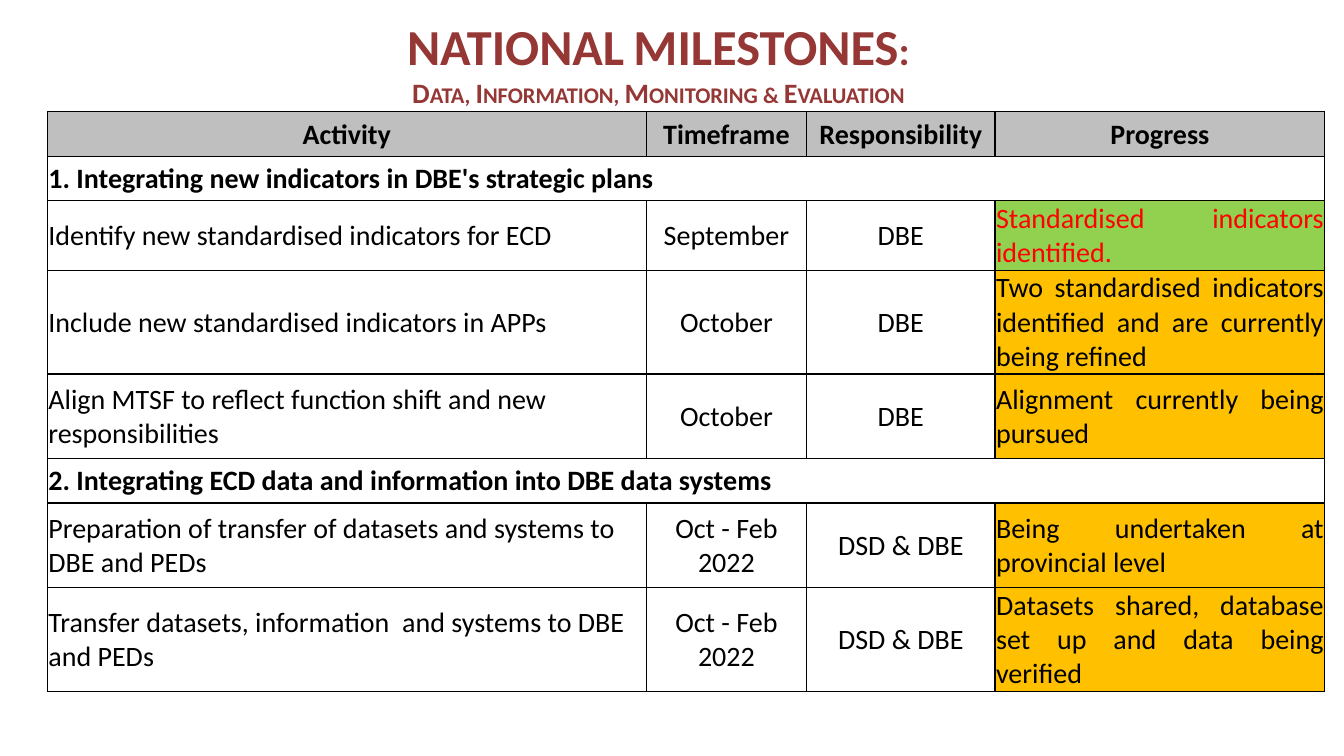
from lxml import etree
from pptx import Presentation
from pptx.dml.color import RGBColor
from pptx.enum.text import MSO_ANCHOR as Anchor, PP_ALIGN as Align
from pptx.oxml.ns import qn
from pptx.util import Inches, Pt

FONT = "Calibri"
COLORS = {
    "title": "953735",
    "text": "000000",
    "alert": "FF0000",
    "border": "000000",
    "header": "BFBFBF",
    "plain": "FFFFFF",
    "done": "92D050",
    "ongoing": "FFC000",
}

TITLE_LINES = [
    ("NATIONAL MILESTONES:", 36),
    ("Data, Information, Monitoring & Evaluation", 20),
]
COLUMN_WIDTHS = [5.94, 1.59, 1.87, 3.27]
COLUMN_ALIGNS = [Align.LEFT, Align.CENTER, Align.CENTER, Align.JUSTIFY]
HEADERS = ["Activity", "Timeframe", "Responsibility", "Progress"]

# Each section: heading, then (activity, timeframe, responsibility, progress, status, row height)
SECTIONS = [
    ("1. Integrating new indicators in DBE's strategic plans", [
        ("Identify new standardised indicators for ECD", "September", "DBE",
         "Standardised indicators identified.", "done", 0.68),
        ("Include new standardised indicators in APPs", "October", "DBE",
         "Two standardised indicators identified and are currently being refined",
         "ongoing", 1.03),
        ("Align MTSF to reflect function shift and new responsibilities", "October", "DBE",
         "Alignment currently being pursued", "ongoing", 0.84),
    ]),
    ("2. Integrating ECD data and information into DBE data systems", [
        ("Preparation of transfer of datasets and systems to DBE and PEDs",
         "Oct - Feb 2022", "DSD & DBE",
         "Being undertaken at provincial level", "ongoing", 0.84),
        ("Transfer datasets, information  and systems to DBE and PEDs",
         "Oct - Feb 2022", "DSD & DBE",
         "Datasets shared, database set up and data being verified", "ongoing", 1.03),
    ]),
]
HEADING_HEIGHT = 0.44


def add_run(paragraph, text, size, color, bold):
    run = paragraph.add_run()
    run.text = text
    run.font.name = FONT
    run.font.size = Pt(size)
    run.font.bold = bold
    run.font.color.rgb = RGBColor.from_string(COLORS[color])
    return run


def add_borders(cell):
    properties = cell._tc.get_or_add_tcPr()
    for index, side in enumerate(("a:lnL", "a:lnR", "a:lnT", "a:lnB")):
        line = etree.Element(qn(side), w=str(Pt(1)))
        fill = etree.SubElement(line, qn("a:solidFill"))
        etree.SubElement(fill, qn("a:srgbClr"), val=COLORS["border"])
        properties.insert(index, line)


def format_cell(cell, fill):
    cell.fill.solid()
    cell.fill.fore_color.rgb = RGBColor.from_string(COLORS[fill])
    cell.vertical_anchor = Anchor.MIDDLE
    cell.margin_left = cell.margin_right = cell.margin_top = Inches(0.01)
    cell.margin_bottom = 0
    add_borders(cell)


def write_cell(cell, text, align, fill="plain", color="text", bold=False):
    format_cell(cell, fill)
    paragraph = cell.text_frame.paragraphs[0]
    paragraph.alignment = align
    add_run(paragraph, text, 20, color, bold)


def write_section_heading(table, row, text):
    for cell in table.rows[row].cells:
        format_cell(cell, "plain")
    heading = table.cell(row, 0)
    heading.merge(table.cell(row, len(HEADERS) - 1))
    write_cell_text = heading.text_frame.paragraphs[0]
    write_cell_text.alignment = Align.LEFT
    add_run(write_cell_text, text, 20, "text", True)


def write_milestone(table, row, texts, status):
    last = len(texts) - 1
    for column, (text, align) in enumerate(zip(texts, COLUMN_ALIGNS)):
        fill = status if column == last else "plain"
        color = "alert" if fill == "done" else "text"
        write_cell(table.cell(row, column), text, align, fill, color)


def add_title(slide, left, top, width, height):
    title = slide.shapes.title
    title.left, title.top = Inches(left), Inches(top)
    title.width, title.height = Inches(width), Inches(height)
    frame = title.text_frame
    frame.word_wrap = True
    frame.vertical_anchor = Anchor.MIDDLE
    for index, (text, size) in enumerate(TITLE_LINES):
        paragraph = frame.add_paragraph() if index else frame.paragraphs[0]
        paragraph.alignment = Align.CENTER
        paragraph.space_before = Pt(0)
        run = add_run(paragraph, text, size, "title", True)
        run.font._element.set("cap", "small")


def add_milestone_table(slide, left, top):
    heights = [HEADING_HEIGHT]
    for _, milestones in SECTIONS:
        heights += [HEADING_HEIGHT] + [milestone[-1] for milestone in milestones]
    table = slide.shapes.add_table(
        len(heights), len(HEADERS), Inches(left), Inches(top),
        Inches(sum(COLUMN_WIDTHS)), Inches(sum(heights))).table
    table.first_row = table.horz_banding = False
    for column, width in zip(table.columns, COLUMN_WIDTHS):
        column.width = Inches(width)
    for row, height in zip(table.rows, heights):
        row.height = Inches(height)

    for column, text in enumerate(HEADERS):
        write_cell(table.cell(0, column), text, Align.CENTER, "header", bold=True)
    row = 1
    for heading, milestones in SECTIONS:
        write_section_heading(table, row, heading)
        row += 1
        for *texts, status, _ in milestones:
            write_milestone(table, row, texts, status)
            row += 1


def main():
    presentation = Presentation()
    presentation.slide_width, presentation.slide_height = Inches(13.33), Inches(7.5)
    slide = presentation.slides.add_slide(presentation.slide_layouts[5])
    add_title(slide, 1.67, 0.13, 9.72, 0.98)
    add_milestone_table(slide, 0.47, 1.11)
    presentation.save("out.pptx")


if __name__ == "__main__":
    main()
